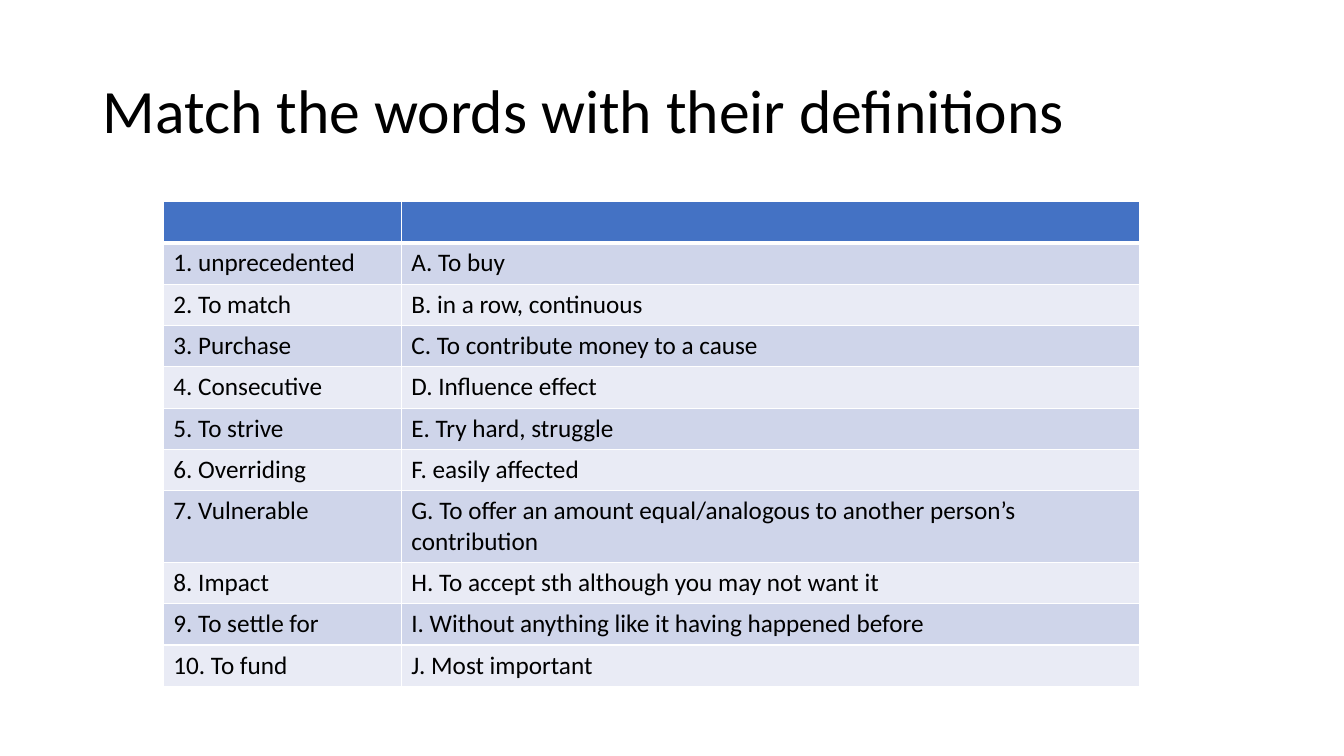
"""Build a vocabulary slide that pairs words with shuffled definitions."""
from pptx import Presentation
from pptx import util as u
from pptx.dml import color
from pptx.enum import text
from pptx.oxml import parse_xml
from pptx.oxml import ns

PAIRS = [
    ("1. unprecedented", "A. To buy"),
    ("2. To match", "B. in a row, continuous"),
    ("3. Purchase", "C. To contribute money to a cause"),
    ("4. Consecutive", "D. Influence effect"),
    ("5. To strive", "E. Try hard, struggle"),
    ("6. Overriding", "F. easily affected"),
    ("7. Vulnerable", "G. To offer an amount equal/analogous to another person’s contribution"),
    ("8. Impact", "H. To accept sth although you may not want it"),
    ("9. To settle for", "I. Without anything like it having happened before"),
    ("10. To fund", "J. Most important"),
]
HEADER, BANDS, RULE, INK = "4472C4", ("E9EBF5", "CFD5EA"), "FFFFFF", "000000"
COLUMNS = (2.36, 7.32)
ROW, TALL_ROW = 0.41, 0.71


def rgb(value):
    return color.RGBColor.from_string(value)


def write(frame, words, size=18, font="Calibri", ink=INK, spacing=1.0):
    para = frame.paragraphs[0]
    para.alignment = text.PP_ALIGN.LEFT
    para.line_spacing = spacing
    span = para.add_run()
    span.text = words
    span.font.size = u.Pt(size)
    span.font.name = font
    span.font.bold = False
    span.font.color.rgb = rgb(ink)


deck = Presentation()
deck.slide_width, deck.slide_height = u.Inches(13.33), u.Inches(7.5)
page = deck.slides.add_slide(deck.slide_layouts.get_by_name("Title Only"))

title = page.shapes.title
title.left, title.top = u.Inches(0.92), u.Inches(0.4)
title.width, title.height = u.Inches(11.5), u.Inches(1.45)
title.text_frame.vertical_anchor = text.MSO_ANCHOR.MIDDLE
write(title.text_frame, "Match the words with their definitions", size=44, spacing=0.9)

rows = [("", "")] + PAIRS
table = page.shapes.add_table(
    len(rows), len(COLUMNS), u.Inches(1.62), u.Inches(2),
    u.Inches(sum(COLUMNS)), u.Inches(ROW * len(PAIRS) + TALL_ROW),
).table
for column, width in zip(table.columns, COLUMNS):
    column.width = u.Inches(width)

for number, words in enumerate(rows):
    wraps = len(words[1]) > 60
    table.rows[number].height = u.Inches(TALL_ROW if wraps else ROW)
    for cell, entry in zip(table.rows[number].cells, words):
        properties = cell._tc.get_or_add_tcPr()
        for side in "LRTB":
            thick = (number == 0 and side == "B") or (number == 1 and side == "T")
            properties.append(parse_xml(
                f'<a:ln{side} {ns.nsdecls("a")} w="{u.Pt(3 if thick else 1)}">'
                f'<a:solidFill><a:srgbClr val="{RULE}"/></a:solidFill></a:ln{side}>'
            ))
        cell.fill.solid()
        cell.fill.fore_color.rgb = rgb(BANDS[number % 2] if number else HEADER)
        if entry:
            write(cell.text_frame, entry)

deck.save("out.pptx")
